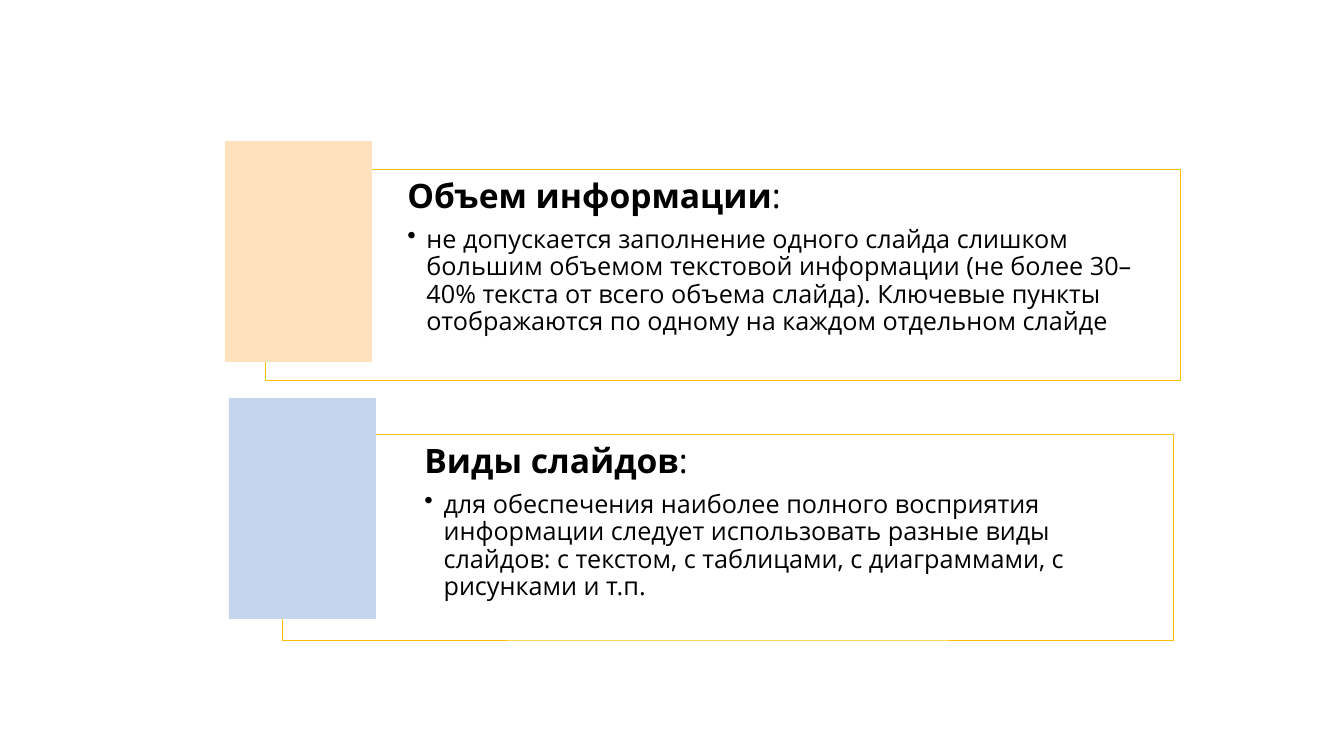
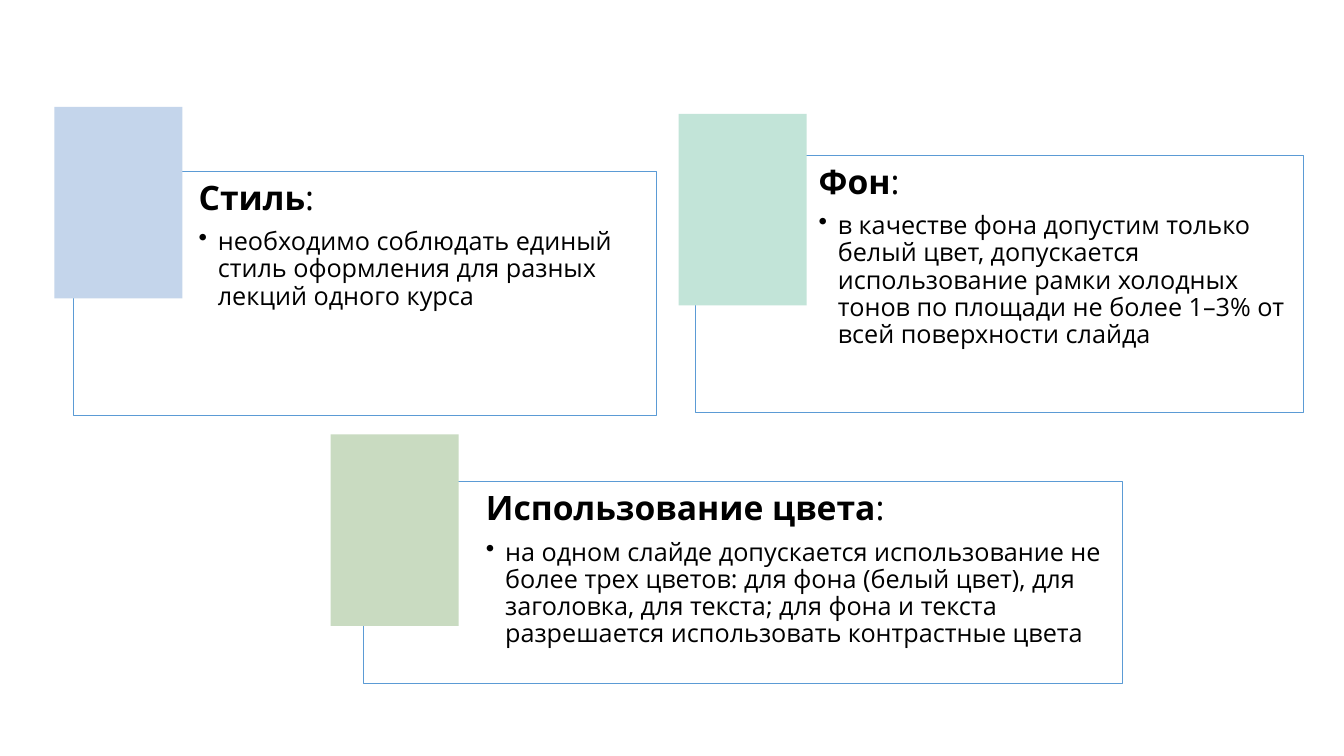
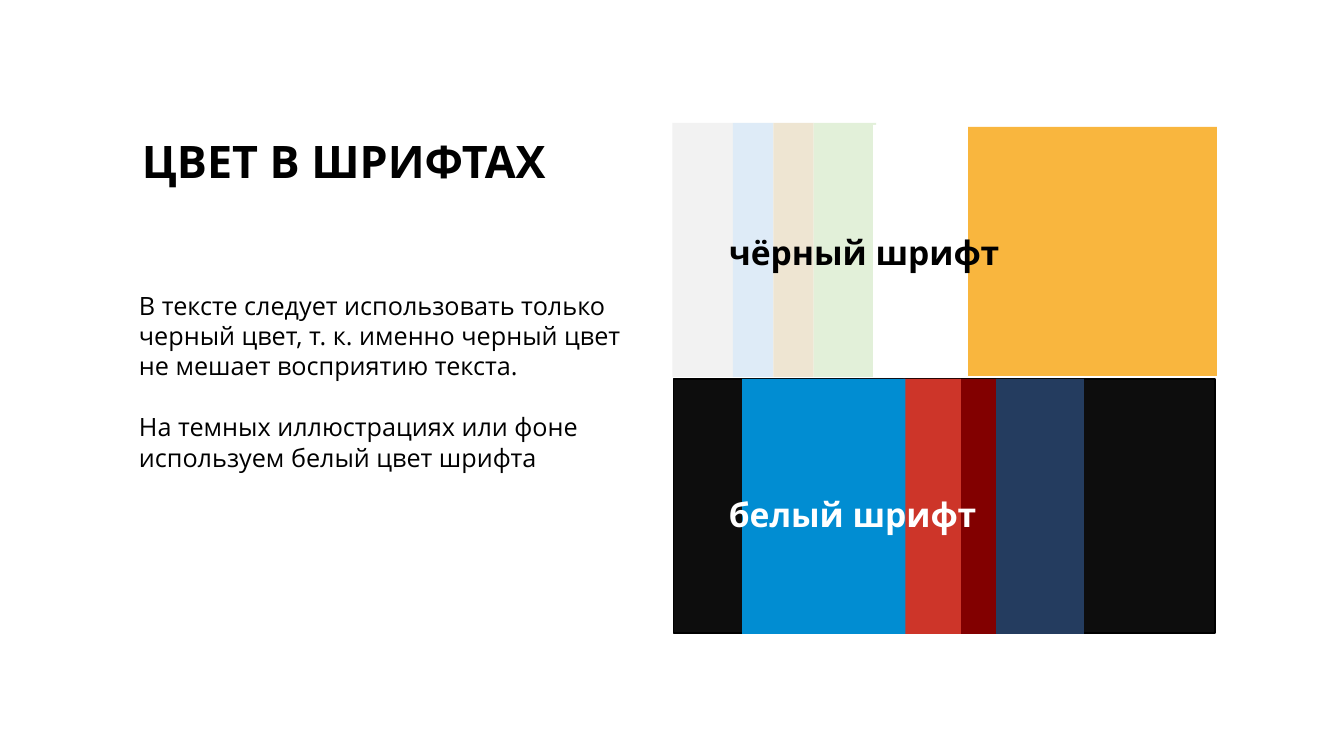
from lxml.etree import SubElement
from pptx import Presentation
from pptx.dml.color import RGBColor
from pptx.enum.shapes import MSO_SHAPE
from pptx.enum.text import MSO_ANCHOR, PP_ALIGN
from pptx.oxml.ns import qn
from pptx.util import Inches, Pt

FONT = "Open Sans"
BLACK, WHITE = "000000", "FFFFFF"
GOLD, BLUE = "FFC000", "5B9BD5"
HEAD = {"size": Pt(24), "bold": True}
BODY = {"size": Pt(18), "bold": False}
TITLE = {"size": Pt(32), "bold": True}


def tint(color, code):
    color.rgb = RGBColor.from_string(code)


def apply(item, values):
    for name, value in values.items():
        setattr(item, name, value)


class Deck:
    def __init__(self):
        self.file = Presentation()
        apply(self.file, {"slide_width": Inches(13.33), "slide_height": Inches(7.5)})
        self.slide = None

    def page(self):
        self.slide = self.file.slides.add_slide(self.file.slide_layouts[6])

    def rect(self, box, fill, line=None, width=0.5):
        shape = self.slide.shapes.add_shape(MSO_SHAPE.RECTANGLE, *map(Inches, box))
        shape.shadow.inherit = False
        shape.fill.solid()
        tint(shape.fill.fore_color, fill)
        if line:
            tint(shape.line.color, line)
            shape.line.width = Pt(width)
        else:
            shape.line.fill.background()
        return shape

    def run(self, para, text, style, color=BLACK):
        run = para.add_run()
        run.text = text
        apply(run.font, {"name": FONT, **style})
        tint(run.font.color, color)

    def bullet(self, para):
        props = para._p.get_or_add_pPr()
        props.set("marL", str(Inches(0.19)))
        props.set("indent", str(-Inches(0.19)))
        SubElement(props, qn("a:buChar")).set("char", "•")

    def card(self, box, inset, line, head, body):
        """Outlined frame with a bold heading and one bullet."""
        shape = self.rect(box, WHITE, line)
        color = shape.fill._xPr.find(qn("a:solidFill"))[0]
        SubElement(color, qn("a:alpha")).set("val", "40000")
        frame = shape.text_frame
        apply(frame, {"word_wrap": True, "vertical_anchor": MSO_ANCHOR.TOP,
                      "margin_left": Inches(inset), "margin_top": Inches(0.1),
                      "margin_right": Inches(0.1), "margin_bottom": Inches(0.1)})
        top, point = frame.paragraphs[0], frame.add_paragraph()
        self.bullet(point)
        for para, after in ((top, 8), (point, 3)):
            apply(para, {"alignment": PP_ALIGN.LEFT, "line_spacing": 0.9,
                         "space_after": Pt(after)})
        self.run(top, head, HEAD)
        self.run(top, ":", {**HEAD, "bold": False})
        self.run(point, body, BODY)

    def text(self, box, lines, style, color=BLACK, gap=22):
        frame = self.slide.shapes.add_textbox(*map(Inches, box)).text_frame
        frame.word_wrap = True
        for i, line in enumerate(lines):
            para = frame.add_paragraph() if i else frame.paragraphs[0]
            if i:
                para.space_before = Pt(gap)
            self.run(para, line, style, color)

    def cards(self, line, size, items):
        """Page of cards, each with a colour block over its corner."""
        self.page()
        for box, inset, spot, fill, head, body in items:
            self.card(box, inset, line, head, body)
            self.rect(spot + size, fill)

    def bands(self, top, height, items):
        for left, width, fill in items:
            self.rect((left, top, width, height), fill)


def main():
    deck = Deck()
    deck.cards(GOLD, (1.46, 2.19), [
        ((2.63, 1.68, 9.08, 2.09), 1.41, (2.23, 1.4), "FFE2BD", "Объем информации",
         "не допускается заполнение одного слайда слишком большим объемом "
         "текстовой информации (не более 30–40% текста от всего объема слайда). "
         "Ключевые пункты отображаются по одному на каждом отдельном слайде"),
        ((2.8, 4.31, 8.84, 2.04), 1.41, (2.27, 3.95), "C5D6EC", "Виды слайдов",
         "для обеспечения наиболее полного восприятия информации следует "
         "использовать разные виды слайдов: с текстом, с таблицами, "
         "с диаграммами, с рисунками и т.п."),
    ])
    deck.cards(BLUE, (1.27, 1.9), [
        ((0.73, 1.7, 5.78, 2.42), 1.24, (0.54, 1.06), "C4D5EB", "Стиль",
         "необходимо соблюдать единый стиль оформления для разных лекций "
         "одного курса"),
        ((6.9, 1.54, 6.03, 2.55), 1.22, (6.73, 1.13), "C2E4D8", "Фон",
         "в качестве фона допустим только белый цвет, допускается использование "
         "рамки холодных тонов по площади не более 1–3% от всей поверхности слайда"),
        ((3.6, 4.78, 7.53, 2), 1.22, (3.28, 4.31), "C9DBC1", "Использование цвета",
         "на одном слайде допускается использование не более трех цветов: "
         "для фона (белый цвет), для заголовка, для текста; для фона и текста "
         "разрешается использовать контрастные цвета"),
    ])

    deck.page()
    deck.bands(1.22, 2.52, [(6.67, 0.6, "F2F2F2"), (7.27, 0.4, "DEEBF7"),
                            (7.67, 0.4, "EEE5D2"), (8.07, 0.62, "E2F0D9")])
    deck.rect((8.69, 1.26, 3.38, 2.47), "F9B63E")
    deck.rect((6.68, 3.76, 5.37, 2.52), "0D0D0D", BLACK, 1)
    deck.bands(3.76, 2.53, [(8.52, 1.4, "820000"), (8.96, 0.57, "CD3529"),
                            (7.36, 1.62, "018DD2"), (9.88, 0.87, "243C5F")])
    deck.rect((8.66, 1.24, 0.94, 2.5), WHITE)
    deck.text((1.31, 1.28, 5.35, 0.64), ["ЦВЕТ В ШРИФТАХ"], TITLE)
    deck.text((1.28, 2.83, 5.2, 1.92), [
        "В тексте следует использовать только черный цвет, т. к. именно "
        "черный цвет не мешает восприятию текста.",
        "На темных иллюстрациях или фоне используем белый цвет шрифта",
    ], BODY)
    for top, label, color in ((2.25, "чёрный шрифт", BLACK), (4.85, "белый шрифт", WHITE)):
        deck.text((7.13, top, 5.35, 0.5), [label], HEAD, color)

    deck.file.save("out.pptx")


if __name__ == "__main__":
    main()
